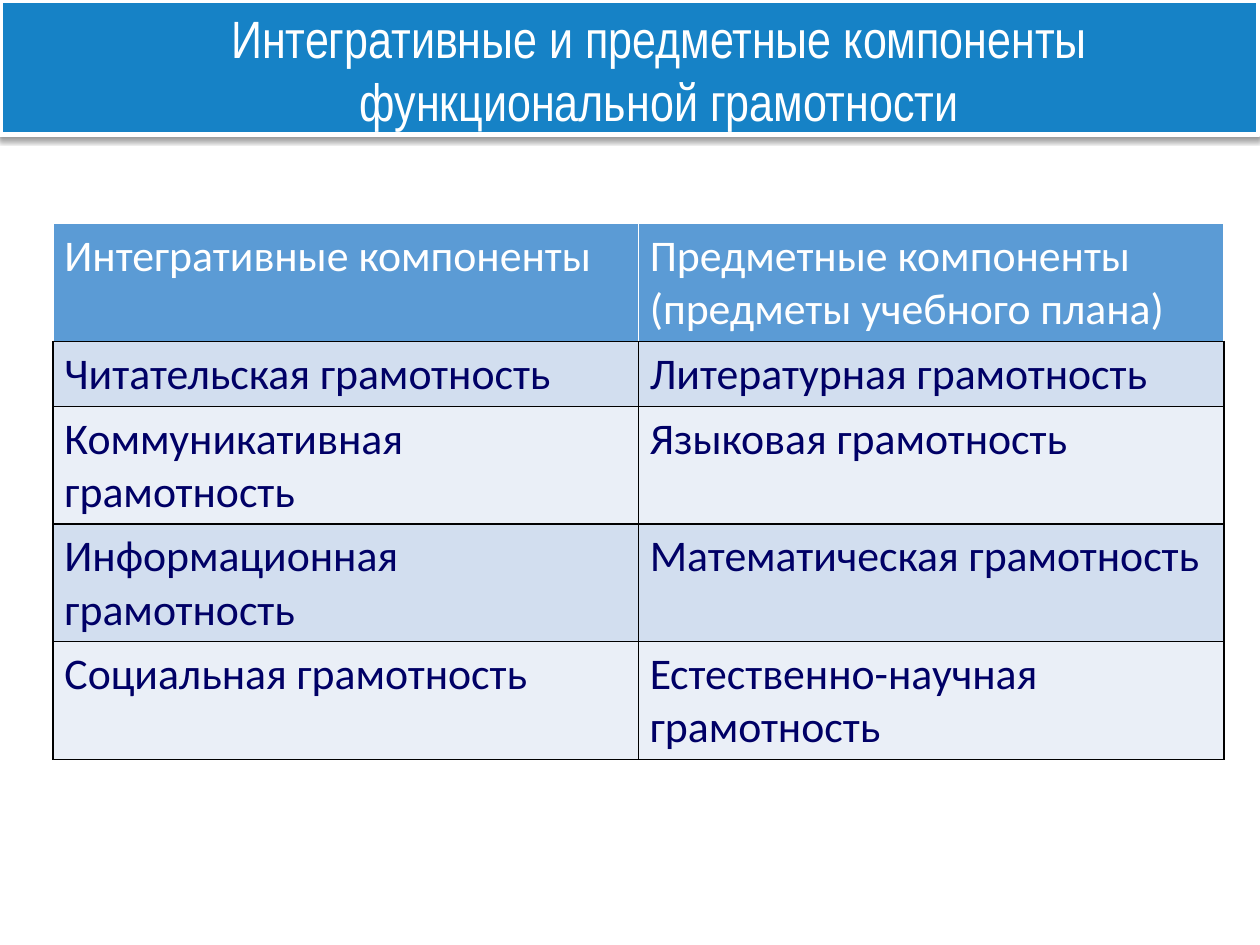
from lxml.etree import SubElement
from pptx import Presentation
from pptx.dml.color import RGBColor
from pptx.enum.shapes import MSO_SHAPE
from pptx.enum.text import MSO_ANCHOR, MSO_AUTO_SIZE, PP_ALIGN
from pptx.oxml import parse_xml
from pptx.oxml.ns import nsdecls, qn
from pptx.util import Cm, Pt

TITLE = "Интегративные и предметные компоненты функциональной грамотности"
ROWS = [
    ("Интегративные компоненты", "Предметные компоненты\n(предметы учебного плана)"),
    ("Читательская грамотность", "Литературная грамотность"),
    ("Коммуникативная грамотность", "Языковая грамотность"),
    ("Информационная грамотность", "Математическая грамотность"),
    ("Социальная грамотность", "Естественно-научная грамотность"),
]
ROW_HEIGHTS = [Cm(2.38), Cm(1.3), Cm(2.34), Cm(2.34), Cm(2.38)]
COLUMN_WIDTH = Cm(11.8)

WHITE = RGBColor(0xFF, 0xFF, 0xFF)
BLACK = RGBColor(0x00, 0x00, 0x00)
BANNER_BLUE = RGBColor(0x16, 0x82, 0xC6)
HEADER_BLUE = RGBColor(0x5B, 0x9B, 0xD5)
NAVY = RGBColor(0x00, 0x00, 0x66)
BAND_COLORS = [RGBColor(0xEA, 0xEF, 0xF7), RGBColor(0xD2, 0xDE, 0xEF)]

TITLE_FONT = {"name": "Arial Narrow", "size": Pt(30), "bold": False}
TABLE_FONT = {"name": "Calibri", "size": Pt(25), "bold": False}


def format_font(font, values, color):
    for name, value in values.items():
        setattr(font, name, value)
    font.color.rgb = color


def set_borders(cell, colors):
    """Draw 1 pt borders; colors maps the side letters L, R, T, B to colours."""
    properties = cell._tc.get_or_add_tcPr()
    for position, (side, color) in enumerate(colors.items()):
        line = parse_xml(
            f'<a:ln{side} {nsdecls("a")} w="{Pt(1)}"><a:solidFill>'
            f'<a:srgbClr val="{color}"/></a:solidFill></a:ln{side}>'
        )
        properties.insert(position, line)


def add_banner(slide):
    banner = slide.shapes.add_shape(MSO_SHAPE.RECTANGLE, 0, 0, Cm(25.37), Cm(2.72))
    banner.fill.solid()
    banner.fill.fore_color.rgb = BANNER_BLUE
    banner.line.color.rgb = WHITE
    banner.line.width = Pt(3)
    banner.shadow.inherit = False
    effects = banner.element.spPr.find(qn("a:effectLst"))
    shadow = SubElement(effects, qn("a:outerShdw"), blurRad=str(Pt(3)),
                        dist=str(Pt(1.6)), dir="5400000", rotWithShape="0")
    color = SubElement(shadow, qn("a:srgbClr"), val=str(BLACK))
    SubElement(color, qn("a:alpha"), val="38000")
    slide.shapes.title.element.addprevious(banner.element)


def add_title(slide):
    title = slide.shapes.title
    title.left, title.top, title.width, title.height = Cm(2.59), Cm(-0.05), Cm(21.41), Cm(2.9)
    frame = title.text_frame
    frame.text = TITLE
    frame.word_wrap = True
    frame.auto_size = MSO_AUTO_SIZE.SHAPE_TO_FIT_TEXT
    frame.vertical_anchor = MSO_ANCHOR.MIDDLE
    paragraph = frame.paragraphs[0]
    paragraph.alignment = PP_ALIGN.CENTER
    format_font(paragraph.runs[0].font, TITLE_FONT, WHITE)


def add_components_table(slide):
    table = slide.shapes.add_table(
        len(ROWS), len(ROWS[0]), Cm(1.07), Cm(4.5),
        COLUMN_WIDTH * len(ROWS[0]), sum(ROW_HEIGHTS),
    ).table
    table.first_row = table.horz_banding = False
    for column in table.columns:
        column.width = COLUMN_WIDTH
    for row_index, texts in enumerate(ROWS):
        table.rows[row_index].height = ROW_HEIGHTS[row_index]
        is_header = row_index == 0
        edge = WHITE if is_header else BLACK
        for column_index, text in enumerate(texts):
            cell = table.cell(row_index, column_index)
            cell.text = text
            cell.margin_left = cell.margin_right = Cm(0.23)
            cell.fill.solid()
            cell.fill.fore_color.rgb = HEADER_BLUE if is_header else BAND_COLORS[row_index % 2]
            set_borders(cell, {"L": edge, "R": edge, "T": edge, "B": BLACK})
            for paragraph in cell.text_frame.paragraphs:
                format_font(paragraph.runs[0].font, TABLE_FONT, WHITE if is_header else NAVY)


def main():
    presentation = Presentation()
    presentation.slide_width, presentation.slide_height = Cm(25.4), Cm(19.05)
    slide = presentation.slides.add_slide(presentation.slide_layouts[5])
    add_banner(slide)
    add_title(slide)
    add_components_table(slide)
    presentation.save("out.pptx")


if __name__ == "__main__":
    main()
